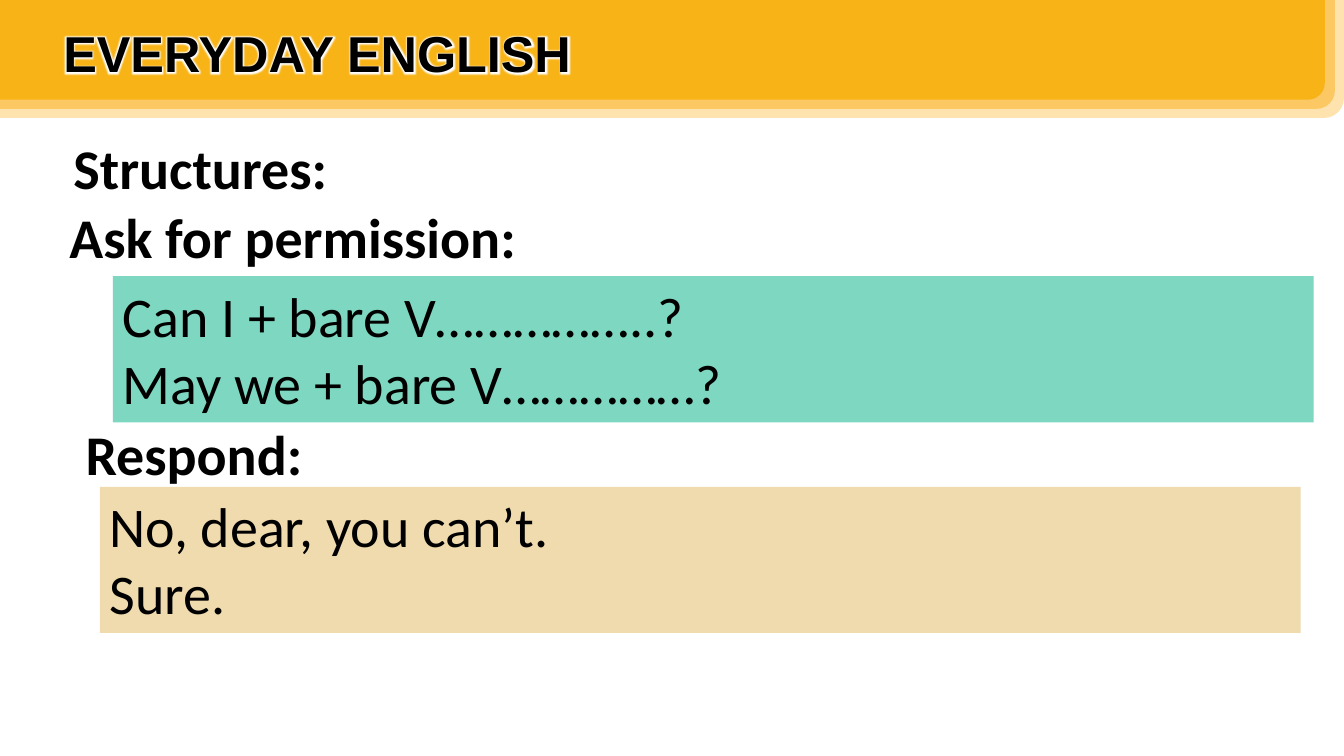
"""Build the Everyday English slide on asking for permission."""
from dataclasses import dataclass

from lxml import etree
from pptx import Presentation
from pptx import util as u
from pptx.dml.color import RGBColor
from pptx.enum import shapes, text
from pptx.oxml import ns


@dataclass
class Band:
    width: float
    height: float
    fill: str


@dataclass
class Block:
    left: float
    top: float
    width: float
    height: float
    lines: tuple[str, ...]
    fill: str = ""
    bold: bool = True
    size: int = 40
    font: str = "Calibri"
    glow: str = ""


BANDS = [
    Band(13.33, 1.18, "FEE3AF"),
    Band(13.24, 1.09, "FBC864"),
    Band(13.14, 1, "F8B417"),
]
WIDE = 11.91
BLOCKS = [
    Block(0.63, 1.28, WIDE, 0.77, ("Structures:",)),
    Block(0.59, 1.96, WIDE, 0.77, ("Ask for permission:",)),
    Block(1.12, 2.74, WIDE, 1.45,
          ("Can I + bare V……………..?", "May we + bare V……………?"), "7ED7C1", False),
    Block(0.75, 4.11, WIDE, 0.77, ("Respond:",)),
    Block(0.99, 4.83, WIDE, 1.45, ("No, dear, you can’t.", "Sure."), "F0DBAF", False),
    Block(0.53, 0.17, 5.24, 0.71, ("EVERYDAY ENGLISH",),
          size=36, font="Arial", glow="FFFFFF"),
]


def color(tint: str) -> RGBColor:
    return RGBColor.from_string(tint)


def add_form(slide, kind, place: list, tint: str):
    form = slide.shapes.add_shape(kind, *place)
    form.shadow.inherit = False
    form.line.fill.background()
    form.fill.solid()
    form.fill.fore_color.rgb = color(tint)
    return form


def draw_band(slide, band: Band) -> None:
    place = [u.Inches(n) for n in (0, -0.01, band.width, band.height)]
    form = add_form(slide, shapes.MSO_SHAPE.ROUND_1_RECTANGLE, place, band.fill)
    form.element.spPr.find(ns.qn("a:xfrm")).set("flipV", "1")


def add_glow(run, tint: str) -> None:
    props = run.font._element
    effect = etree.SubElement(props, ns.qn("a:effectLst"))
    glow = etree.SubElement(effect, ns.qn("a:glow"), rad=str(u.Pt(5)))
    etree.SubElement(glow, ns.qn("a:srgbClr"), val=tint)


def draw_block(slide, block: Block) -> None:
    place = [u.Inches(n) for n in (block.left, block.top, block.width, block.height)]
    if block.fill:
        form = add_form(slide, shapes.MSO_SHAPE.RECTANGLE, place, block.fill)
    else:
        form = slide.shapes.add_textbox(*place)
    frame = form.text_frame
    frame.word_wrap = True
    frame.auto_size = text.MSO_AUTO_SIZE.SHAPE_TO_FIT_TEXT
    frame.vertical_anchor = text.MSO_ANCHOR.TOP
    for i, line in enumerate(block.lines):
        para = frame.add_paragraph() if i else frame.paragraphs[0]
        para.alignment = text.PP_ALIGN.LEFT
        run = para.add_run()
        run.text = line
        run.font.size = u.Pt(block.size)
        run.font.bold = block.bold
        run.font.color.rgb = color("000000")
        if block.glow:
            add_glow(run, block.glow)
        run.font.name = block.font


def main() -> None:
    deck = Presentation()
    deck.slide_width, deck.slide_height = u.Inches(13.33), u.Inches(7.5)
    slide = deck.slides.add_slide(deck.slide_layouts[6])
    for band in BANDS:
        draw_band(slide, band)
    for block in BLOCKS:
        draw_block(slide, block)
    deck.save("out.pptx")


if __name__ == "__main__":
    main()
